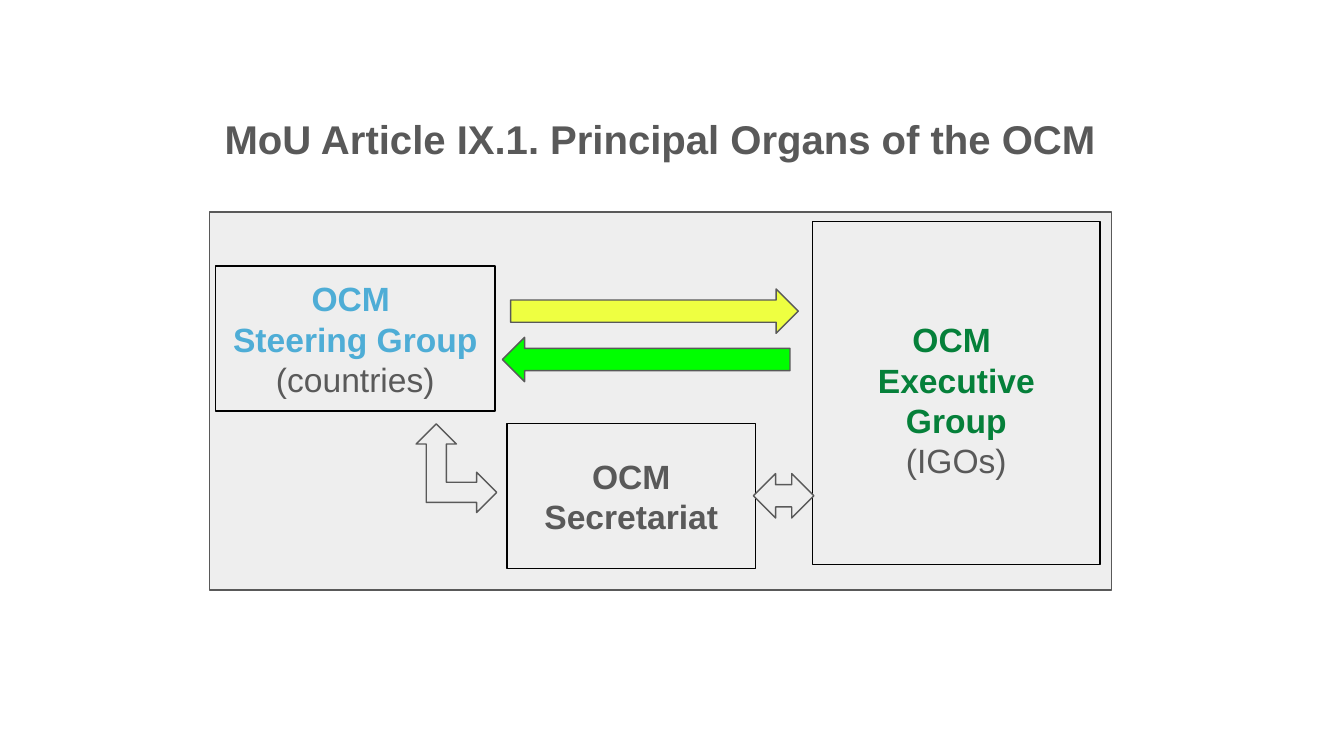
from pptx import Presentation
from pptx.dml.color import RGBColor
from pptx.enum.shapes import MSO_SHAPE
from pptx.enum.text import MSO_ANCHOR, PP_ALIGN
from pptx.util import Inches, Pt

RECTANGLE = MSO_SHAPE.RECTANGLE
RIGHT_ARROW = MSO_SHAPE.RIGHT_ARROW
LEFT_RIGHT_ARROW = MSO_SHAPE.LEFT_RIGHT_ARROW
LEFT_UP_ARROW = MSO_SHAPE.LEFT_UP_ARROW
CENTER = PP_ALIGN.CENTER
MIDDLE = MSO_ANCHOR.MIDDLE

GRAY = RGBColor(0x59, 0x59, 0x59)
LIGHT_GRAY = RGBColor(0xEE, 0xEE, 0xEE)
BLACK = RGBColor(0x00, 0x00, 0x00)
BLUE = RGBColor(0x4E, 0xAD, 0xD6)
DARK_GREEN = RGBColor(0x05, 0x80, 0x3A)
YELLOW = RGBColor(0xEE, 0xFF, 0x41)
GREEN = RGBColor(0x00, 0xFF, 0x00)

presentation = Presentation()
presentation.slide_width = Inches(10)
presentation.slide_height = Inches(10) * 9 // 16
slide = presentation.slides.add_slide(presentation.slide_layouts[6])
COLUMN = presentation.slide_width / 100
ROW = presentation.slide_height / 100


def add_outlined(kind, left, top, width, height, line_color, fill_color=None):
    shape = slide.shapes.add_shape(
        kind, int(left * COLUMN), int(top * ROW), int(width * COLUMN), int(height * ROW))
    shape.shadow.inherit = False
    if fill_color is None:
        shape.fill.background()
    else:
        shape.fill.solid()
        shape.fill.fore_color.rgb = fill_color
    shape.line.color.rgb = line_color
    shape.line.width = Pt(0.75)
    return shape


def write_lines(frame, lines, size):
    frame.word_wrap = True
    frame.margin_left = frame.margin_right = Inches(0.1)
    frame.margin_top = frame.margin_bottom = Inches(0.1)
    for index, (text, color, bold) in enumerate(lines):
        paragraph = frame.add_paragraph() if index else frame.paragraphs[0]
        paragraph.text = text
        paragraph.alignment = CENTER
        paragraph.font.name = "Arial"
        paragraph.font.size = Pt(size)
        paragraph.font.bold = bold
        paragraph.font.color.rgb = color


title = slide.shapes.add_textbox(
    int(12.6 * COLUMN), int(12.44 * ROW), int(73.1 * COLUMN), int(66.49 * ROW))
write_lines(title.text_frame, [("MoU Article IX.1. Principal Organs of the OCM", GRAY, True)], 21.5)
title.text_frame.paragraphs[0].line_spacing = 1.15

add_outlined(RECTANGLE, 15.6, 28.05, 67.1, 50, GRAY, LIGHT_GRAY)

organs = [
    ((16.04, 35.2, 20.8, 19.2), 0.1,
     [("OCM ", BLUE, True), ("Steering Group", BLUE, True), ("(countries)", GRAY, False)]),
    ((37.72, 56, 18.5, 19.2), 0.1,
     [("OCM", GRAY, True), ("Secretariat", GRAY, True)]),
    ((60.46, 29.33, 21.4, 45.33), 0.2,
     [("OCM ", DARK_GREEN, True), ("Executive Group", DARK_GREEN, True), ("(IGOs)", GRAY, False)]),
]
for box, top_margin, lines in organs:
    organ = add_outlined(RECTANGLE, *box, BLACK)
    write_lines(organ.text_frame, lines, 18)
    organ.text_frame.margin_top = Inches(top_margin)
    organ.text_frame.vertical_anchor = MIDDLE

arrows = [
    (LEFT_UP_ARROW, (30.66, 56.6, 6.6, 10.67), 90, LIGHT_GRAY),
    (LEFT_RIGHT_ARROW, (56.06, 62.65, 4.5, 5.87), 0, LIGHT_GRAY),
    (RIGHT_ARROW, (38, 38.22, 21.4, 5.87), 0, YELLOW),
    (RIGHT_ARROW, (37.38, 44.62, 21.4, 5.87), 180, GREEN),
]
for kind, box, rotation, color in arrows:
    arrow = add_outlined(kind, *box, GRAY, color)
    arrow.rotation = rotation

presentation.save("out.pptx")
